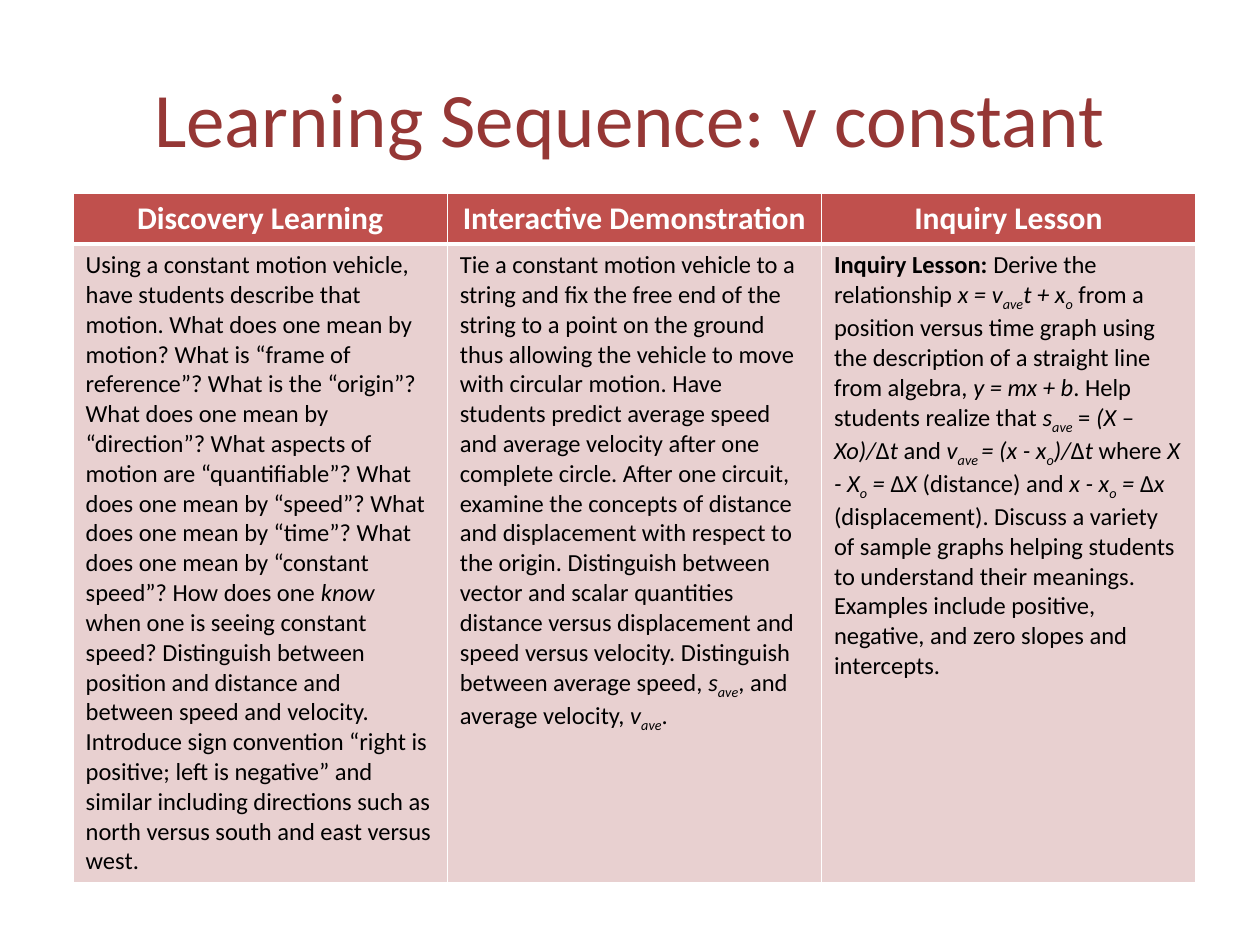
import pptx
import pptx.dml.color
import pptx.enum.text
import pptx.oxml
import pptx.oxml.ns
import pptx.util

Pt = pptx.util.Pt
ALIGN = pptx.enum.text.PP_ALIGN
ANCHOR = pptx.enum.text.MSO_ANCHOR

THEME = {
    "font": "Calibri",
    "title": "953735", "header": "C0504D", "body": "E8D0D0",
    "light": "FFFFFF", "dark": "000000",
    "title_size": 44, "header_size": 18, "body_size": 14,
    "rule": 1, "header_rule": 3,
}

TITLE = "Learning Sequence: v constant"

# Each lesson is a heading and its runs: (text, style), where the style
# letters are b = bold, i = italic, s = subscript.
LESSONS = [
    ("Discovery Learning", [
        ("Using a constant motion vehicle, have students describe that motion. "
         "What does one mean by motion? What is “frame of reference”? What is "
         "the “origin”? What does one mean by “direction”? What aspects of "
         "motion are “quantifiable”? What does one mean by “speed”? What does "
         "one mean by “time”? What does one mean by “constant speed”? How does "
         "one ", ""),
        ("know", "i"),
        (" when one is seeing constant speed? Distinguish between position and "
         "distance and between speed and velocity. Introduce sign convention "
         "“right is positive; left is negative” and similar including "
         "directions such as north versus south and east versus west.", ""),
    ]),
    ("Interactive Demonstration", [
        ("Tie a constant motion vehicle to a string and fix the free end of the "
         "string to a point on the ground thus allowing the vehicle to move "
         "with circular motion. Have students predict average speed and "
         "average velocity after one complete circle. After one circuit, "
         "examine the concepts of distance and displacement with respect to "
         "the origin. Distinguish between vector and scalar quantities "
         "distance versus displacement and speed versus velocity. Distinguish "
         "between average speed, ", ""),
        ("s", "i"), ("ave", "is"),
        (", and average velocity, ", ""),
        ("v", "i"), ("ave", "is"), (".", ""),
    ]),
    ("Inquiry Lesson", [
        ("Inquiry Lesson:", "b"),
        (" Derive the relationship ", ""),
        ("x = v", "i"), ("ave", "is"), ("t + x", "i"), ("o", "is"),
        (" from a position versus time graph using the description of a "
         "straight line from algebra, ", ""),
        ("y = mx + b", "i"),
        (". Help students realize that ", ""),
        ("s", "i"), ("ave", "is"), (" =", ""), (" (X – Xo)/", "i"),
        ("Δ", ""), ("t", "i"),
        (" and ", ""),
        ("v", "i"), ("ave ", "is"), ("= (x - x", "i"), ("o", "is"),
        (")/", "i"), ("Δ", ""), ("t ", "i"),
        ("where ", ""),
        ("X - X", "i"), ("o", "is"), (" = ", "i"), ("Δ", ""), ("X", "i"),
        (" (distance) and ", ""),
        ("x - x", "i"), ("o", "is"), (" = ", "i"), ("Δ", ""), ("x", "i"),
        (" (displacement). Discuss a variety of sample graphs helping students "
         "to understand their meanings. Examples include positive, negative, "
         "and zero slopes and intercepts.", ""),
    ]),
]

TITLE_BOX = (0, 21.6, 720, 90)
TABLE_LEFT, TABLE_TOP, TABLE_WIDTH = 41.75, 110.25, 641.5
ROW_HEIGHTS = (29.2, 343)


def write(frame, runs, size, color, align=ALIGN.LEFT):
    """Fill the first paragraph of a text frame with (text, style) runs."""
    paragraph = frame.paragraphs[0]
    paragraph.alignment = align
    for text, style in runs:
        run = paragraph.add_run()
        run.text = text
        run.font.name = THEME["font"]
        run.font.size = Pt(size)
        run.font.color.rgb = pptx.dml.color.RGBColor.from_string(color)
        run.font.bold = "b" in style
        run.font.italic = "i" in style
        if "s" in style:
            run._r.get_or_add_rPr().set("baseline", "-25000")


def paint_cell(cell, fill, top, bottom):
    """Give a cell its fill and white borders."""
    widths = {"L": THEME["rule"], "R": THEME["rule"], "T": top, "B": bottom}
    properties = cell._tc.get_or_add_tcPr()
    for side, width in widths.items():
        properties.append(pptx.oxml.parse_xml(
            f'<a:ln{side} {pptx.oxml.ns.nsdecls("a")} w="{Pt(width)}">'
            f'<a:solidFill><a:srgbClr val="{THEME["light"]}"/></a:solidFill>'
            f'</a:ln{side}>'))
    cell.fill.solid()
    cell.fill.fore_color.rgb = pptx.dml.color.RGBColor.from_string(fill)


def add_title(slide):
    title = slide.shapes.title
    title.left, title.top, title.width, title.height = map(Pt, TITLE_BOX)
    title.text_frame.vertical_anchor = ANCHOR.MIDDLE
    write(title.text_frame, [(TITLE, "")], THEME["title_size"],
          THEME["title"], ALIGN.CENTER)


def add_lessons(slide):
    table = slide.shapes.add_table(
        len(ROW_HEIGHTS), len(LESSONS), Pt(TABLE_LEFT), Pt(TABLE_TOP),
        Pt(TABLE_WIDTH), Pt(sum(ROW_HEIGHTS))).table
    for row, height in zip(table.rows, ROW_HEIGHTS):
        row.height = Pt(height)
    for column, (heading, activity) in enumerate(LESSONS):
        table.columns[column].width = Pt(TABLE_WIDTH / len(LESSONS))
        header, body = table.cell(0, column), table.cell(1, column)
        paint_cell(header, THEME["header"], THEME["rule"], THEME["header_rule"])
        paint_cell(body, THEME["body"], THEME["header_rule"], THEME["rule"])
        write(header.text_frame, [(heading, "b")], THEME["header_size"],
              THEME["light"], ALIGN.CENTER)
        write(body.text_frame, activity, THEME["body_size"], THEME["dark"])


def main():
    deck = pptx.Presentation()
    deck.slide_width, deck.slide_height = Pt(720), Pt(540)
    slide = deck.slides.add_slide(deck.slide_layouts.get_by_name("Title Only"))
    add_title(slide)
    add_lessons(slide)
    deck.save("out.pptx")


if __name__ == "__main__":
    main()
